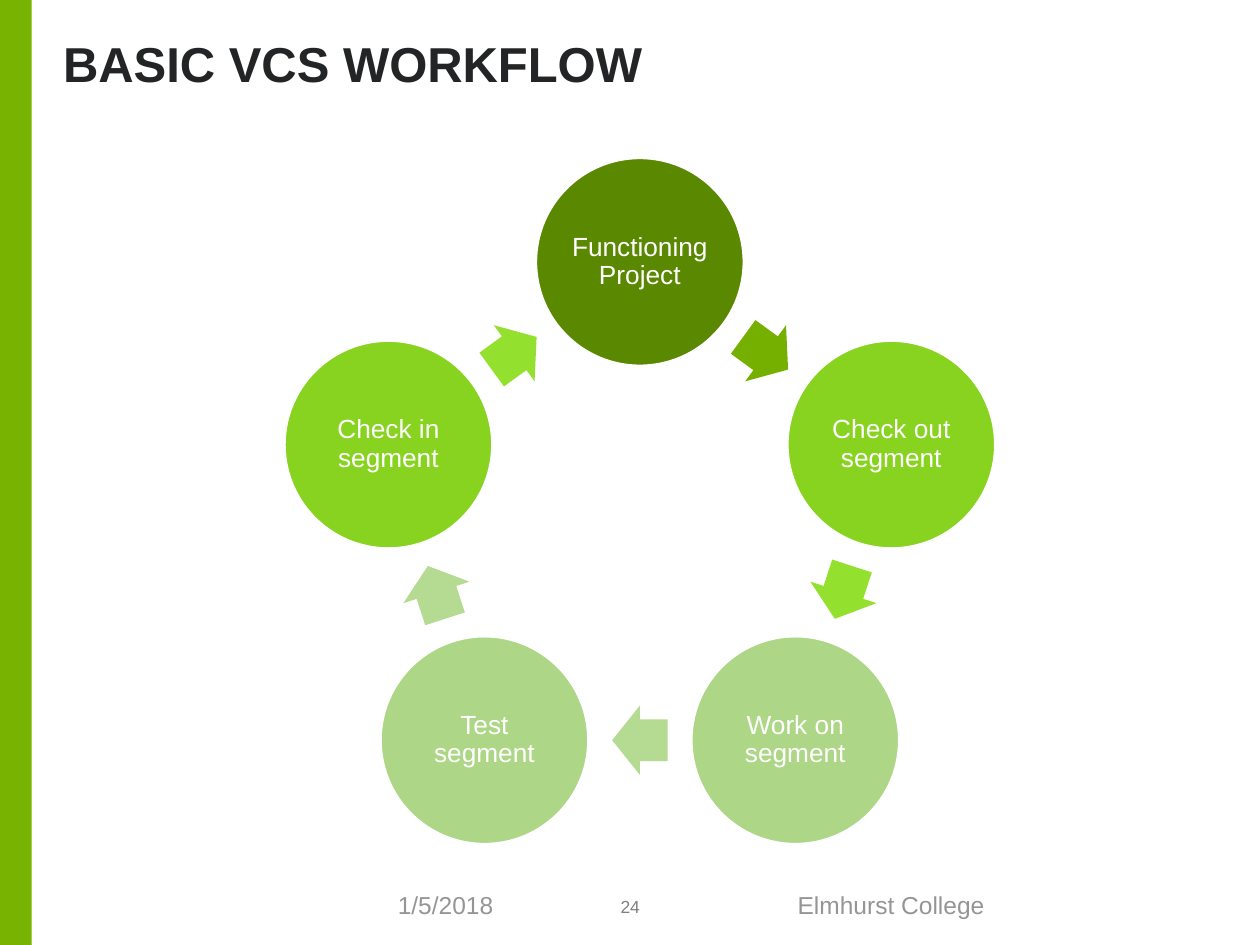
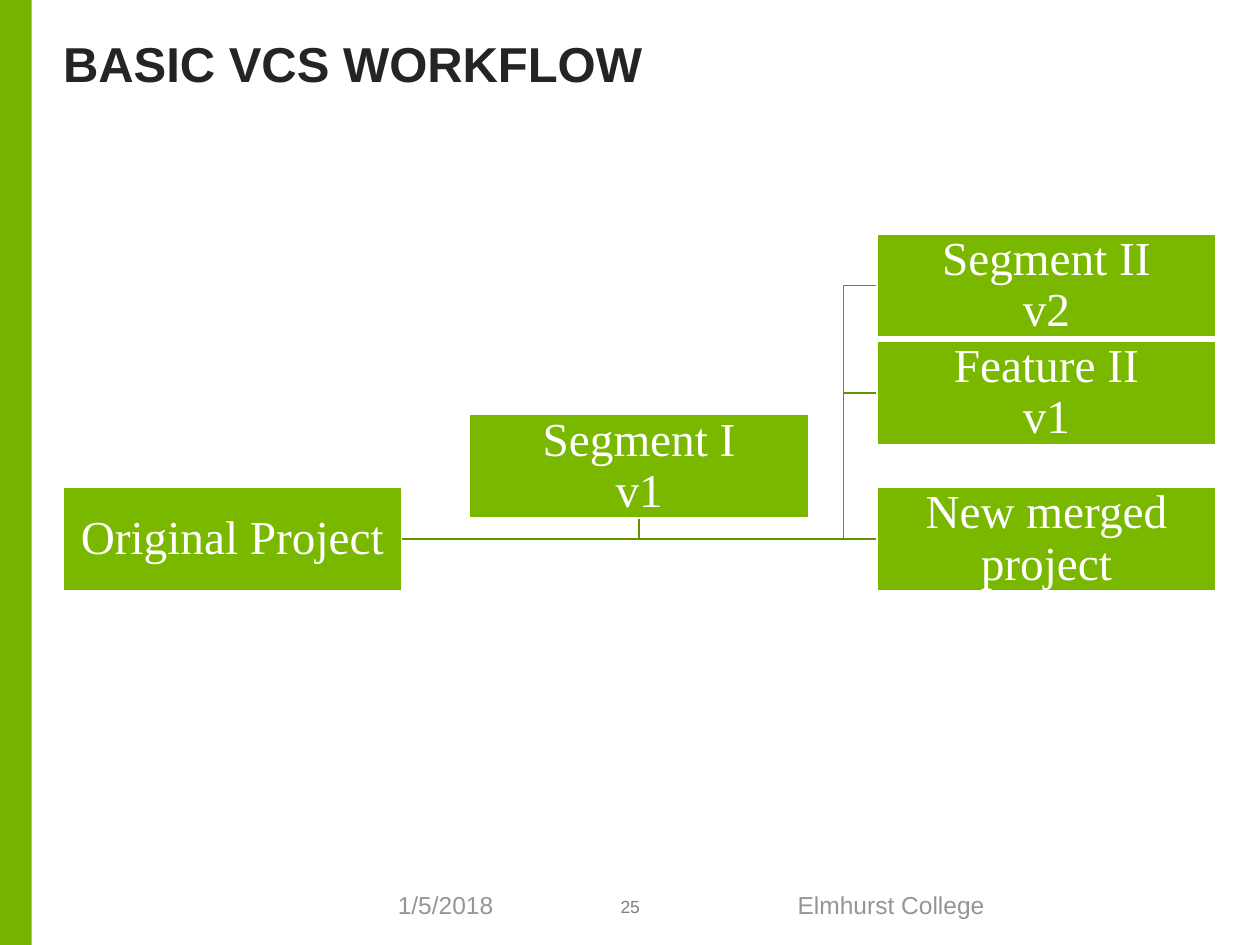
from math import cos, pi, sin

from lxml.etree import SubElement
from pptx import Presentation
from pptx.dml.color import RGBColor
from pptx.enum.shapes import MSO_CONNECTOR, MSO_SHAPE
from pptx.enum.text import MSO_ANCHOR as ANCHOR, MSO_AUTO_SIZE, PP_ALIGN as ALIGN
from pptx.oxml.ns import qn
from pptx.util import Cm, Pt

COLORS = {
    "bar": "77B300",
    "title": "232425",
    "number": "808080",
    "footer": "959596",
    "white": "FFFFFF",
    "box": "7AB800",
    "branch": "629300",
}
SANS = "Arial"
SERIF = "Times New Roman"
LINE = Pt(0.85)


def rgb(value):
    return RGBColor.from_string(COLORS.get(value, value))


class Deck:
    def __init__(self):
        self.prs = Presentation()
        self.prs.slide_width = Cm(25.4)
        self.prs.slide_height = Cm(19.05)
        self.slide = None

    def add_slide(self, title, number):
        self.slide = self.prs.slides.add_slide(self.prs.slide_layouts[5])
        self.shape(MSO_SHAPE.RECTANGLE, 0, 0, 0.64, 19.05, "bar")
        sp = self.slide.shapes.title
        sp.left, sp.top, sp.width, sp.height = Cm(1.27), Cm(0.76), Cm(23.27), Cm(2.31)
        self.set_text(sp, title, SANS, 28, "title", ALIGN.LEFT, ANCHOR.TOP,
                      (0, 0, 0, 0), 0.95, True)
        self.text(number, 12.07, 17.98, 1.27, 0.51, 10, "number", ALIGN.CENTER,
                  ANCHOR.BOTTOM, (0, 0.13, 0, 0))
        self.text("1/5/2018", 7.77, 17.8, 5.33, 0.89, 14, "footer", ALIGN.LEFT)
        self.text("Elmhurst College", 13.9, 17.8, 8.13, 0.89, 14, "footer", ALIGN.CENTER)

    def set_text(self, sp, text, font, size, color, align, anchor, insets,
                 spacing=1.0, bold=False):
        tf = sp.text_frame
        tf.text = text
        tf.word_wrap = True
        tf.auto_size = MSO_AUTO_SIZE.NONE
        tf.vertical_anchor = anchor
        tf.margin_left, tf.margin_top, tf.margin_right, tf.margin_bottom = map(Cm, insets)
        for p in tf.paragraphs:
            p.alignment = align
            p.line_spacing = spacing
            for r in p.runs:
                r.font.name = font
                r.font.size = Pt(size)
                r.font.bold = bold
                r.font.color.rgb = rgb(color)

    def text(self, text, x, y, w, h, size, color, align, anchor=ANCHOR.MIDDLE,
             insets=(0.25, 0.13, 0.25, 0.13)):
        sp = self.slide.shapes.add_textbox(Cm(x), Cm(y), Cm(w), Cm(h))
        self.set_text(sp, text, SANS, size, color, align, anchor, insets)

    def shape(self, kind, x, y, w, h, fill):
        sp = self.slide.shapes.add_shape(kind, Cm(x), Cm(y), Cm(w), Cm(h))
        sp.shadow.inherit = False
        sp.fill.solid()
        sp.fill.fore_color.rgb = rgb(fill)
        sp.line.fill.background()
        return sp

    def node(self, kind, text, x, y, w, h, fill, font, size):
        sp = self.shape(kind, x, y, w, h, fill)
        sp.line.color.rgb = rgb("white")
        sp.line.width = LINE
        self.set_text(sp, text, font, size, "white", ALIGN.CENTER, ANCHOR.MIDDLE,
                      (0.05,) * 4, 0.9)

    def arrow(self, cx, cy, w, h, angle, fill):
        sp = self.shape(MSO_SHAPE.RIGHT_ARROW, cx - w / 2, cy - h / 2, w, h, fill)
        sp.adjustments[0], sp.adjustments[1] = 0.6, 0.5
        sp.rotation = angle

    def line(self, x1, y1, x2, y2):
        sp = self.slide.shapes.add_connector(
            MSO_CONNECTOR.STRAIGHT, Cm(x1), Cm(y1), Cm(x2), Cm(y2))
        sp.line.color.rgb = rgb("branch")
        sp.line.width = LINE
        SubElement(sp.element.spPr, qn("a:effectLst"))

    def elbow(self, *points):
        start, *rest = [(Cm(x), Cm(y)) for x, y in points]
        builder = self.slide.shapes.build_freeform(*start)
        builder.add_line_segments(rest, close=False)
        sp = builder.convert_to_shape()
        sp.shadow.inherit = False
        sp.fill.background()
        sp.line.color.rgb = rgb("branch")
        sp.line.width = LINE


def add_cycle(deck):
    cx, cy, radius, diameter = 12.9, 10.61, 5.33, 4.17
    steps = [
        ("Functioning\vProject", "5A8800", "75B000"),
        ("Check out segment", "87D31F", "94E02E"),
        ("Work on segment", "ADD686", "B5DA92"),
        ("Test segment", "ADD686", "B5DA92"),
        ("Check in segment", "87D31F", "94E02E"),
    ]
    step = 2 * pi / len(steps)
    arrow_radius = radius * cos(step / 2)
    for i, (label, fill, arrow_fill) in enumerate(steps):
        angle = i * step
        x, y = cx + radius * sin(angle), cy - radius * cos(angle)
        deck.node(MSO_SHAPE.OVAL, label, x - diameter / 2, y - diameter / 2,
                  diameter, diameter, fill, SANS, 15)
        middle = angle + step / 2
        deck.arrow(cx + arrow_radius * sin(middle), cy - arrow_radius * cos(middle),
                   1.12, 1.4, (i + 0.5) * 360 / len(steps), arrow_fill)


def add_branches(deck):
    w, h = 6.83, 2.08
    left, center, right = 1.27, 9.47, 17.68
    trunk = 17.0
    main_row, segment, feature, second = 9.83, 8.36, 6.88, 4.72
    start = (left + w, main_row + h / 2)
    stem = center + w / 2
    deck.elbow(start, (stem, start[1]), (stem, segment + h))
    for y in (second, feature):
        deck.elbow(start, (trunk, start[1]), (trunk, y + h / 2), (right, y + h / 2))
    deck.line(*start, right, start[1])
    for label, x, y in [
        ("Original Project", left, main_row),
        ("Feature II\vv1", right, feature),
        ("New merged project", right, main_row),
        ("Segment II\vv2", right, second),
        ("Segment I\vv1", center, segment),
    ]:
        deck.node(MSO_SHAPE.RECTANGLE, label, x, y, w, h, "box", SERIF, 27)


def main():
    deck = Deck()
    for number, draw in (("24", add_cycle), ("25", add_branches)):
        deck.add_slide("BASIC VCS WORKFLOW", number)
        draw(deck)
    deck.prs.save("out.pptx")


if __name__ == "__main__":
    main()
